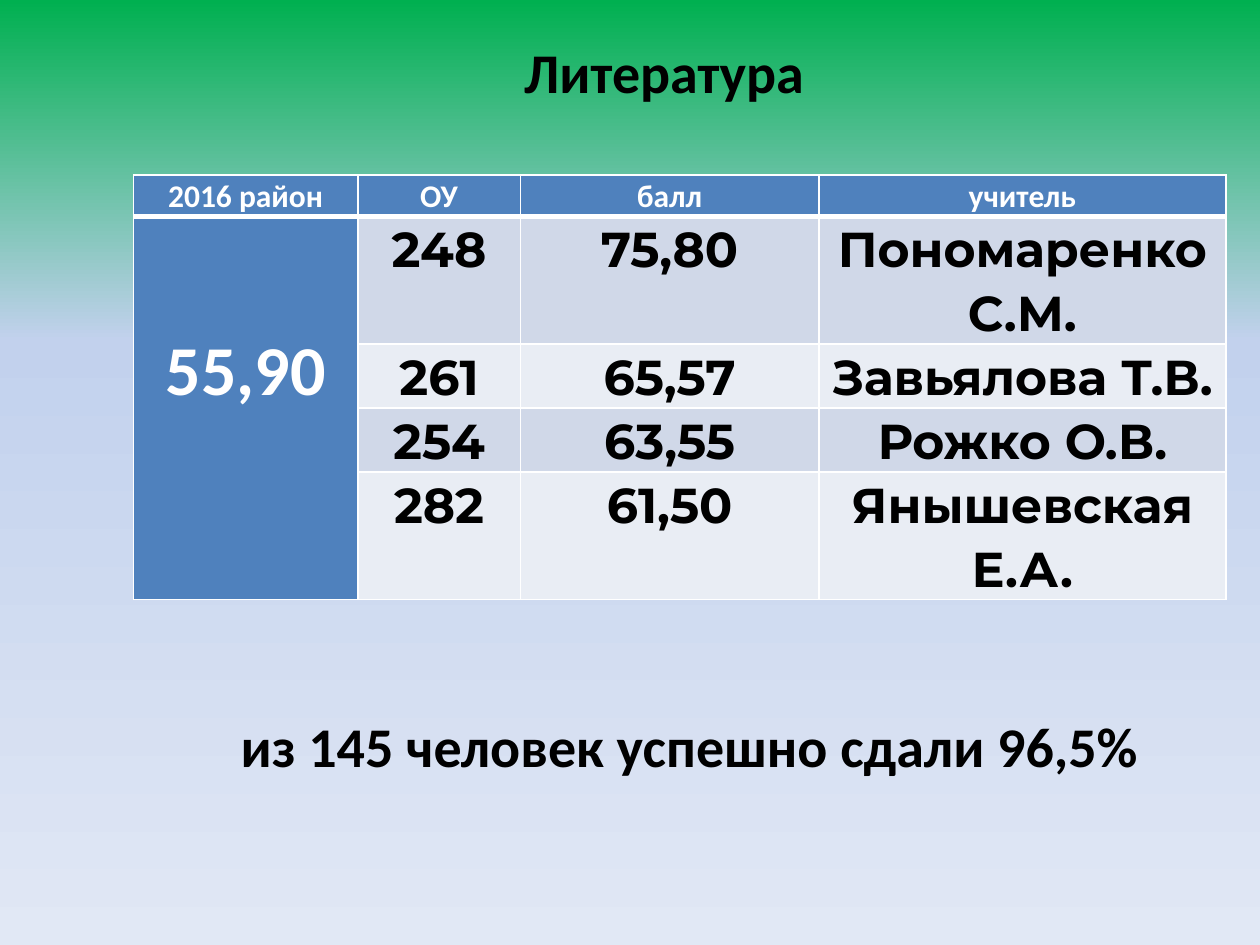
import copy

import pptx
import pptx.dml.color
import pptx.enum.text
import pptx.oxml
import pptx.oxml.ns
import pptx.util
from pptx.util import Inches

HEADER = ["2016 район", "ОУ", "балл", "учитель"]
RESULTS = [
    ["248", "75,80", "Пономаренко С.М."],
    ["261", "65,57", "Завьялова Т.В."],
    ["254", "63,55", "Рожко О.В."],
    ["282", "61,50", "Янышевская Е.А."],
]
DISTRICT_SCORE = "55,90"
COL_WIDTHS = [1.78, 1.29, 2.37, 3.23]
ROW_HEIGHTS = [0.32, 1, 0.5, 0.5, 1]
BLUE, WHITE, BLACK = "4F81BD", "FFFFFF", "000000"
BANDS = ["D0D8E8", "E9EDF4"]
CENTER = pptx.enum.text.PP_ALIGN.CENTER
LEFT = pptx.enum.text.PP_ALIGN.LEFT


def rgb(value):
    return pptx.dml.color.RGBColor.from_string(value)


def set_background(slide, stops):
    """Fill the background from top to bottom with (position, colour) stops."""
    fill = slide.background.fill
    fill.gradient()
    fill.gradient_angle = 270
    gs_lst = next(slide.background._cSld.iter(pptx.oxml.ns.qn("a:gsLst")))
    while len(gs_lst) < len(stops):
        gs_lst.append(copy.deepcopy(gs_lst[0]))
    for stop, (position, color) in zip(fill.gradient_stops, stops):
        stop.position = position
        stop.color.rgb = rgb(color)


def write(tf, text, size, color=BLACK, font="Calibri", align=CENTER):
    p = tf.paragraphs[0]
    p.text = text
    p.alignment = align
    p.line_spacing = 1.07
    p.font.size = pptx.util.Pt(size)
    p.font.name = font
    p.font.bold = True
    p.font.color.rgb = rgb(color)


def place(sp, left, top, width, height, wrap):
    sp.left, sp.top = Inches(left), Inches(top)
    sp.width, sp.height = Inches(width), Inches(height)
    tf = sp.text_frame
    tf.word_wrap = wrap
    tf.auto_size = pptx.enum.text.MSO_AUTO_SIZE.NONE
    tf.vertical_anchor = pptx.enum.text.MSO_ANCHOR.TOP
    return tf


def set_borders(cell, bottom):
    """Draw white cell borders, 1 pt wide except for the bottom one."""
    tc_pr = cell._tc.get_or_add_tcPr()
    for i, side in enumerate("LRTB"):
        width = pptx.util.Pt(bottom if side == "B" else 1)
        tc_pr.insert(i, pptx.oxml.parse_xml(
            f'<a:ln{side} {pptx.oxml.ns.nsdecls("a")} w="{width}"><a:solidFill>'
            f'<a:srgbClr val="{WHITE}"/></a:solidFill></a:ln{side}>'))


def style_cell(cell, fill, bottom=1):
    cell.fill.solid()
    cell.fill.fore_color.rgb = rgb(fill)
    cell.margin_left = cell.margin_right = Inches(0.07)
    cell.margin_top = cell.margin_bottom = 0
    set_borders(cell, bottom)


def add_results_table(slide):
    table = slide.shapes.add_table(
        len(ROW_HEIGHTS), len(COL_WIDTHS), Inches(1.06), Inches(1.39),
        Inches(sum(COL_WIDTHS)), Inches(sum(ROW_HEIGHTS))).table
    for column, width in zip(table.columns, COL_WIDTHS):
        column.width = Inches(width)
    for row, height in zip(table.rows, ROW_HEIGHTS):
        row.height = Inches(height)

    for c, text in enumerate(HEADER):
        cell = table.cell(0, c)
        style_cell(cell, BLUE, bottom=3)
        write(cell.text_frame, text, 18, WHITE)
    for r, values in enumerate(RESULTS, 1):
        style_cell(table.cell(r, 0), BLUE)
        for c, text in enumerate(values, 1):
            cell = table.cell(r, c)
            style_cell(cell, BANDS[(r - 1) % 2])
            write(cell.text_frame, text, 28, font="Montserrat")

    district = table.cell(1, 0)
    district.merge(table.cell(len(RESULTS), 0))
    district.margin_top = Inches(0.85)
    write(district.text_frame, DISTRICT_SCORE, 40, WHITE)


def main():
    prs = pptx.Presentation()
    prs.slide_width, prs.slide_height = Inches(10), Inches(7.5)
    slide = prs.slides.add_slide(prs.slide_layouts[5])
    set_background(slide, [(0, "00B050"), (0.36, "C2D1ED"), (1, "E1E8F5")])

    title = place(slide.shapes.title, 4.06, 0.21, 2.54, 0.65, wrap=False)
    write(title, "Литература", 32, align=LEFT)
    add_results_table(slide)
    summary = place(slide.shapes.add_textbox(0, 0, 0, 0), 1.3, 5.56, 8.35, 0.68, wrap=True)
    write(summary, "из 145 человек успешно сдали 96,5%", 32)
    prs.save("out.pptx")


if __name__ == "__main__":
    main()
